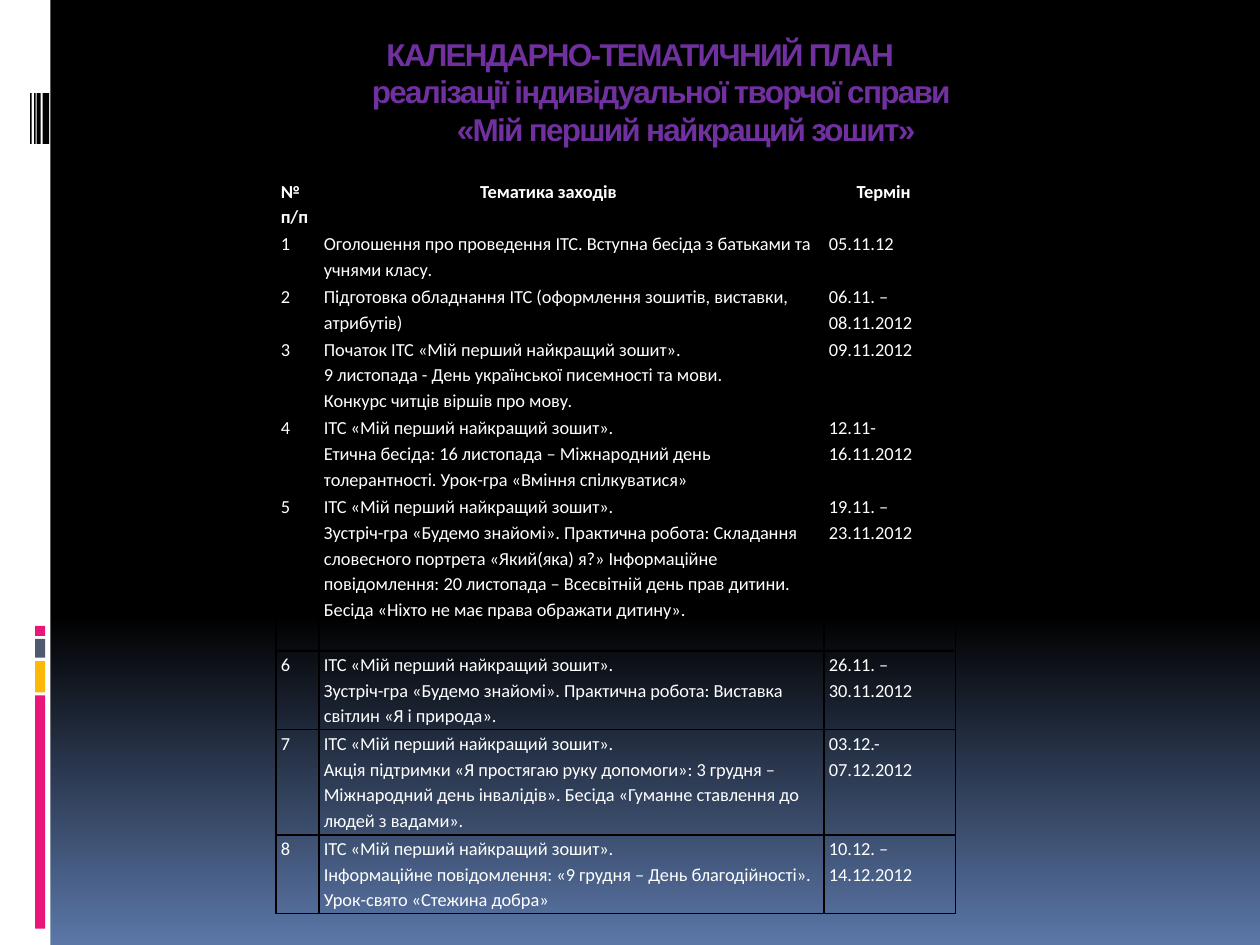
from lxml.etree import SubElement
from pptx import Presentation
from pptx.dml.color import RGBColor
from pptx.enum.shapes import MSO_SHAPE as Shape
from pptx.enum.text import MSO_ANCHOR as Anchor, PP_ALIGN as Align
from pptx.oxml.ns import qn
from pptx.util import Cm, Pt


def color(value):
    return RGBColor.from_string(value)


def add_borders(cell, value):
    properties = cell._tc.get_or_add_tcPr()
    for side in ("a:lnL", "a:lnR", "a:lnT", "a:lnB"):
        line = SubElement(properties, qn(side), w=str(Pt(1)))
        solid = SubElement(line, qn("a:solidFill"))
        SubElement(solid, qn("a:srgbClr"), val=value)


prs = Presentation()
prs.slide_width, prs.slide_height = Cm(25.4), Cm(19.05)
slide = prs.slides.add_slide(prs.slide_layouts[5])

backdrop = slide.background.fill
backdrop.gradient()
backdrop.gradient_angle = 270
for stop, position, value in zip(backdrop.gradient_stops, (0.65, 1), ("000000", "5B77A8")):
    stop.position = position
    stop.color.rgb = color(value)

side_bars = [
    (0, 0, 1.02, 19.05, "FFFFFF"),
    (0.71, 14.02, 0.2, 4.7, "EA157A"),
    (0.71, 13.33, 0.2, 0.63, "FEB80A"),
    (0.71, 12.88, 0.2, 0.38, "4E5B6F"),
    (0.71, 12.62, 0.2, 0.2, "EA157A"),
]
side_bars += [(left, 1.88, width, 1.02, "000000")
              for left, width in ((0.86, 0.13), (0.74, 0.08), (0.69, 0.03), (0.61, 0.03))]
for left, top, width, height, value in side_bars:
    bar = slide.shapes.add_shape(Shape.RECTANGLE, Cm(left), Cm(top), Cm(width), Cm(height))
    bar.shadow.inherit = False
    bar.fill.solid()
    bar.fill.fore_color.rgb = color(value)
    bar.line.fill.background()

title = slide.shapes.title
title.left, title.top, title.width, title.height = Cm(0.84), Cm(0.58), Cm(24.13), Cm(3.58)
heading = title.text_frame
heading.text = ("КАЛЕНДАРНО-ТЕМАТИЧНИЙ ПЛАН\n"
                "реалізації індивідуальної творчої справи\n"
                "«Мій перший найкращий зошит»")
heading.vertical_anchor = Anchor.TOP
heading.word_wrap = True
for paragraph, indent in zip(heading.paragraphs, (0, 0.85, 1.85)):
    paragraph.alignment = Align.CENTER
    paragraph.line_spacing = Pt(21.5)
    paragraph.space_before = Pt(0)
    paragraph._p.get_or_add_pPr().set("marL", str(Cm(indent)))
    for run in paragraph.runs:
        run.font.name, run.font.size, run.font.bold = "Arial", Pt(18), True
        run.font.color.rgb = color("7030A0")
        run._r.get_or_add_rPr().set("spc", "-100")

project = "ІТС «Мій перший найкращий зошит».\n"
plan = [
    ("№\nп/п", "Тематика заходів", "Термін"),
    ("1", "Оголошення про проведення ІТС. Вступна бесіда з батьками та учнями класу.", "05.11.12"),
    ("2", "Підготовка обладнання ІТС (оформлення зошитів, виставки, атрибутів)",
     "06.11. – 08.11.2012"),
    ("3", "Початок " + project + "9 листопада - День української писемності та мови.\n"
     "Конкурс читців віршів про мову.", "09.11.2012"),
    ("4", project + "Етична бесіда: 16 листопада – Міжнародний день толерантності. "
     "Урок-гра «Вміння спілкуватися»", "12.11- 16.11.2012"),
    ("5", project + "Зустріч-гра «Будемо знайомі». Практична робота: Складання словесного "
     "портрета «Який(яка) я?» Інформаційне повідомлення: 20 листопада – Всесвітній день "
     "прав дитини. Бесіда «Ніхто не має права ображати дитину».", "19.11. – 23.11.2012"),
    ("6", project + "Зустріч-гра «Будемо знайомі». Практична робота: Виставка світлин "
     "«Я і природа».", "26.11. – 30.11.2012"),
    ("7", project + "Акція підтримки «Я простягаю руку допомоги»: 3 грудня – Міжнародний "
     "день інвалідів». Бесіда «Гуманне ставлення до людей з вадами».", "03.12.- 07.12.2012"),
    ("8", project + "Інформаційне повідомлення: «9 грудня – День благодійності». "
     "Урок-свято «Стежина добра»", "10.12. – 14.12.2012"),
]
column_widths = (0.87, 10.18, 2.65)
line_counts = (2, 2, 2, 3, 3, 6, 3, 4, 3)
line_height = 0.53
header_indents = (0, 3.15, 0.56)

schedule = slide.shapes.add_table(len(plan), len(column_widths), Cm(5.56), Cm(3.58),
                                  Cm(sum(column_widths)),
                                  Cm(line_height * sum(line_counts))).table
schedule.first_row = schedule.horz_banding = False
for column, width in zip(schedule.columns, column_widths):
    column.width = Cm(width)
for row, lines in zip(schedule.rows, line_counts):
    row.height = Cm(line_height * lines)

for row_index, entry in enumerate(plan):
    for column_index, wording in enumerate(entry):
        cell = schedule.cell(row_index, column_index)
        cell.text_frame.text = wording
        cell.margin_left = cell.margin_right = Cm(0.1)
        cell.margin_top = cell.margin_bottom = 0
        add_borders(cell, "000000")
        cell.fill.background()
        for paragraph in cell.text_frame.paragraphs:
            paragraph.line_spacing = 1.15
            if row_index == 0:
                paragraph._p.get_or_add_pPr().set("marL", str(Cm(header_indents[column_index])))
            for run in paragraph.runs:
                run.font.name, run.font.size = "Calibri", Pt(10.5)
                run.font.bold = row_index == 0
                run.font.color.rgb = color("FFFFFF")

prs.save("out.pptx")
